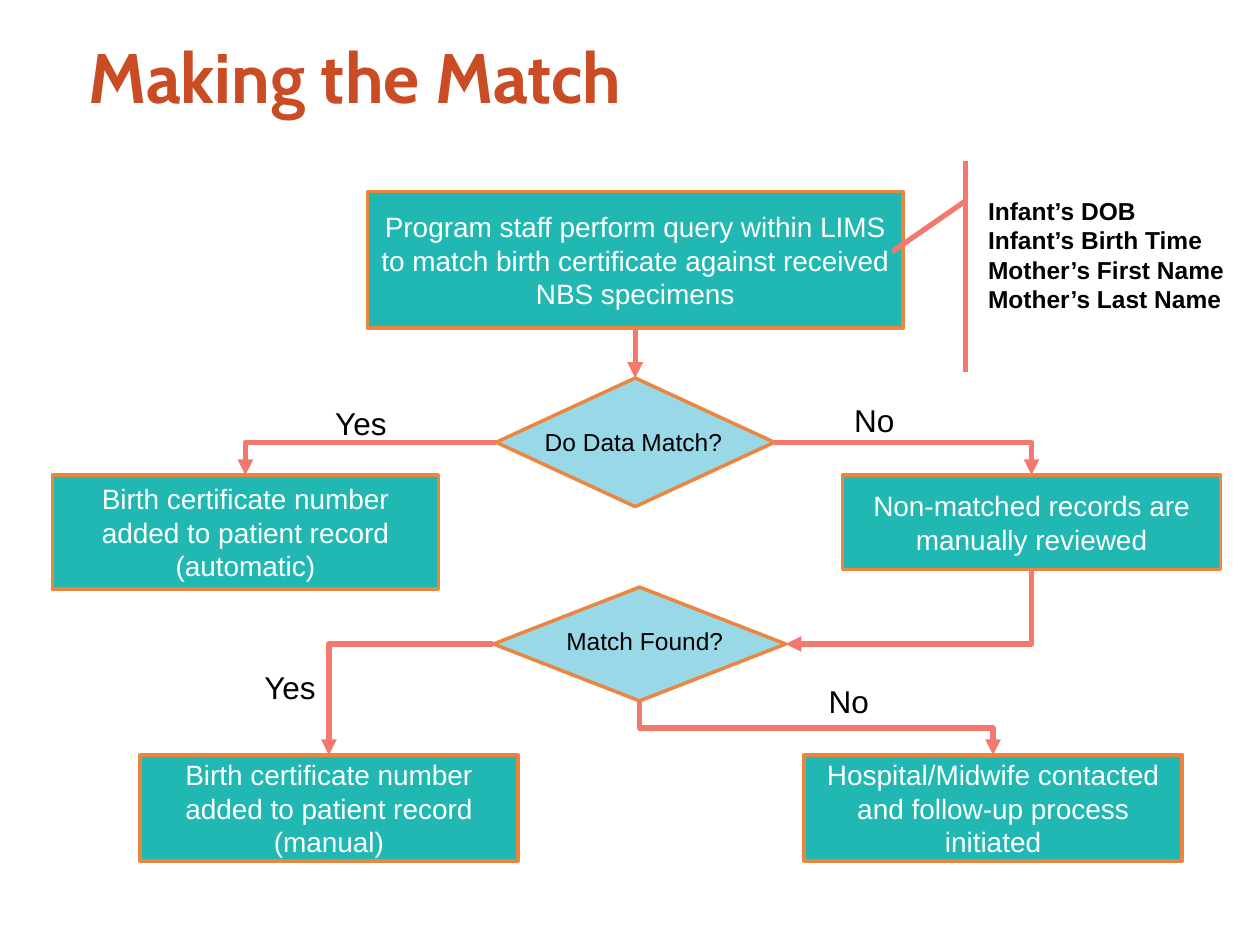
from lxml.etree import SubElement
from pptx import Presentation
from pptx.dml.color import RGBColor
from pptx.enum.shapes import MSO_CONNECTOR, MSO_SHAPE
from pptx.enum.text import MSO_ANCHOR, PP_ALIGN
from pptx.oxml.ns import qn
from pptx.util import Pt

THEME = {
    "teal": "21B8B3", "sky": "99D9E7", "orange": "EA8640", "coral": "F3786E",
    "rust": "C94C25", "white": "FFFFFF", "black": "000000",
    "body_font": "Arial", "title_font": "Cabin",
    "title": 40, "label": 18, "step": 16, "detail": 14,
    "outline": 2, "flow": 3,
}

# Boxes are (left, top, width, height) in points.
TITLE = ("Making the Match", (36, 12, 384, 62.5))
STEPS = {
    "query": ("Program staff perform query within LIMS to match birth certificate "
              "against received NBS specimens", (210, 109.5, 306, 78)),
    "automatic": ("Birth certificate number added to patient record (automatic)",
                  (30, 271.5, 220.5, 65)),
    "review": ("Non-matched records are manually reviewed", (481.5, 271.5, 216, 54)),
    "manual": ("Birth certificate number added to patient record (manual)",
               (80, 431.5, 216, 60.5)),
    "contact": ("Hospital/Midwife contacted and follow-up process initiated",
                (459.5, 431.5, 216, 60.5)),
}
# Each decision: question, diamond box, question box
DECISIONS = {
    "data match": ("Do Data Match?", (283.5, 216, 159, 73.5), (300, 240.5, 124, 24.5)),
    "match found": ("Match Found?", (282, 335.5, 167, 65), (310, 354, 117, 24.5)),
}
ANSWERS = [("Yes", 184.5, 227.5), ("No", 481, 225.5),
           ("Yes", 144, 378), ("No", 466.5, 386)]
ANSWER_SIZE = (66, 29)
CRITERIA = ("Infant’s DOB\nInfant’s Birth Time\nMother’s First Name\nMother’s Last Name",
            (557.5, 108.5, 162, 75))
CALLOUT = (564, 92, 154.5, 120.5)
CALLOUT_ADJUSTMENTS = (0.19, -0.08, 0.43, -0.35)

TOP, LEFT, BOTTOM, RIGHT = range(4)
# Each elbow: from, side, to, side, number of segments
ELBOWS = [
    ("data match", LEFT, "automatic", TOP, 2),
    ("data match", RIGHT, "review", TOP, 2),
    ("review", BOTTOM, "match found", RIGHT, 2),
    ("match found", LEFT, "manual", TOP, 2),
    ("match found", BOTTOM, "contact", TOP, 3),
]


def color(name):
    return RGBColor.from_string(THEME[name])


def points(values):
    return [Pt(value) for value in values]


def write(shape, text, size, ink="black", font="body_font", bold=False,
          align=PP_ALIGN.LEFT, anchor=MSO_ANCHOR.TOP):
    frame = shape.text_frame
    frame.word_wrap = True
    frame.vertical_anchor = anchor
    frame.text = text
    for paragraph in frame.paragraphs:
        paragraph.alignment = align
        paragraph.font.name = THEME[font]
        paragraph.font.size = Pt(THEME[size])
        paragraph.font.bold = bold
        paragraph.font.color.rgb = color(ink)
    return frame


def add_label(slide, text, box, size, **style):
    return write(slide.shapes.add_textbox(*points(box)), text, size, **style)


def add_node(slide, kind, box, fill=None, line="orange", weight="outline"):
    node = slide.shapes.add_shape(kind, *points(box))
    node.shadow.inherit = False
    if fill:
        node.fill.solid()
        node.fill.fore_color.rgb = color(fill)
    else:
        node.fill.background()
    node.line.color.rgb = color(line)
    node.line.width = Pt(THEME[weight])
    return node


def add_arrow(slide, kind, start, end):
    arrow = slide.shapes.add_connector(kind, *points(start + end))
    arrow.line.color.rgb = color("coral")
    arrow.line.width = Pt(THEME["flow"])
    SubElement(arrow.line._get_or_add_ln(), qn("a:tailEnd"), type="triangle")
    SubElement(arrow._element.spPr, qn("a:effectLst"))
    return arrow


def side_middle(box, side):
    left, top, width, height = box
    across, down = {TOP: (0.5, 0), LEFT: (0, 0.5),
                    BOTTOM: (0.5, 1), RIGHT: (1, 0.5)}[side]
    return left + across * width, top + down * height


def add_elbow(slide, start, end, segments, vertical_first):
    """A vertical first leg needs the frame turned a quarter about its centre."""
    if vertical_first:
        (x1, y1), (x2, y2) = start, end
        middle_x, middle_y = (x1 + x2) / 2, (y1 + y2) / 2
        half_x, half_y = (x2 - x1) / 2, (y2 - y1) / 2
        start = middle_x - half_y, middle_y + half_x
        end = middle_x + half_y, middle_y - half_x
    elbow = add_arrow(slide, MSO_CONNECTOR.ELBOW, start, end)
    properties = elbow._element.spPr
    properties.find(qn("a:prstGeom")).set("prst", f"bentConnector{segments}")
    if vertical_first:
        properties.find(qn("a:xfrm")).set("rot", str(90 * 60000))


def main():
    deck = Presentation()
    deck.slide_width, deck.slide_height = Pt(720), Pt(540)
    slide = deck.slides.add_slide(deck.slide_layouts[6])

    text, box = TITLE
    title = add_label(slide, text, box, "title", ink="rust", font="title_font",
                      bold=True, anchor=MSO_ANCHOR.MIDDLE)
    title.margin_left, title.margin_right = Pt(14.4), 0

    nodes, boxes = {}, {}
    for name, (text, box) in STEPS.items():
        nodes[name], boxes[name] = add_node(slide, MSO_SHAPE.RECTANGLE, box, "teal"), box
        write(nodes[name], text, "step", ink="white", align=PP_ALIGN.CENTER,
              anchor=MSO_ANCHOR.MIDDLE)
    for name, (text, box, text_box) in DECISIONS.items():
        nodes[name] = add_node(slide, MSO_SHAPE.FLOWCHART_DECISION, box, "sky")
        boxes[name] = box
        add_label(slide, text, text_box, "detail", align=PP_ALIGN.CENTER)

    callout = add_node(slide, MSO_SHAPE.LINE_CALLOUT_1_ACCENT_BAR, CALLOUT,
                       line="coral", weight="flow")
    for index, value in enumerate(CALLOUT_ADJUSTMENTS):
        callout.adjustments[index] = value
    text, box = CRITERIA
    add_label(slide, text, box, "detail", bold=True)
    for text, left, top in ANSWERS:
        add_label(slide, text, (left, top, *ANSWER_SIZE), "label")

    first = add_arrow(slide, MSO_CONNECTOR.STRAIGHT,
                      side_middle(boxes["query"], BOTTOM),
                      side_middle(boxes["data match"], TOP))
    first.begin_connect(nodes["query"], BOTTOM)
    first.end_connect(nodes["data match"], TOP)
    for source, source_side, target, target_side, segments in ELBOWS:
        add_elbow(slide, side_middle(boxes[source], source_side),
                  side_middle(boxes[target], target_side),
                  segments, vertical_first=source_side == BOTTOM)

    deck.save("out.pptx")


if __name__ == "__main__":
    main()
